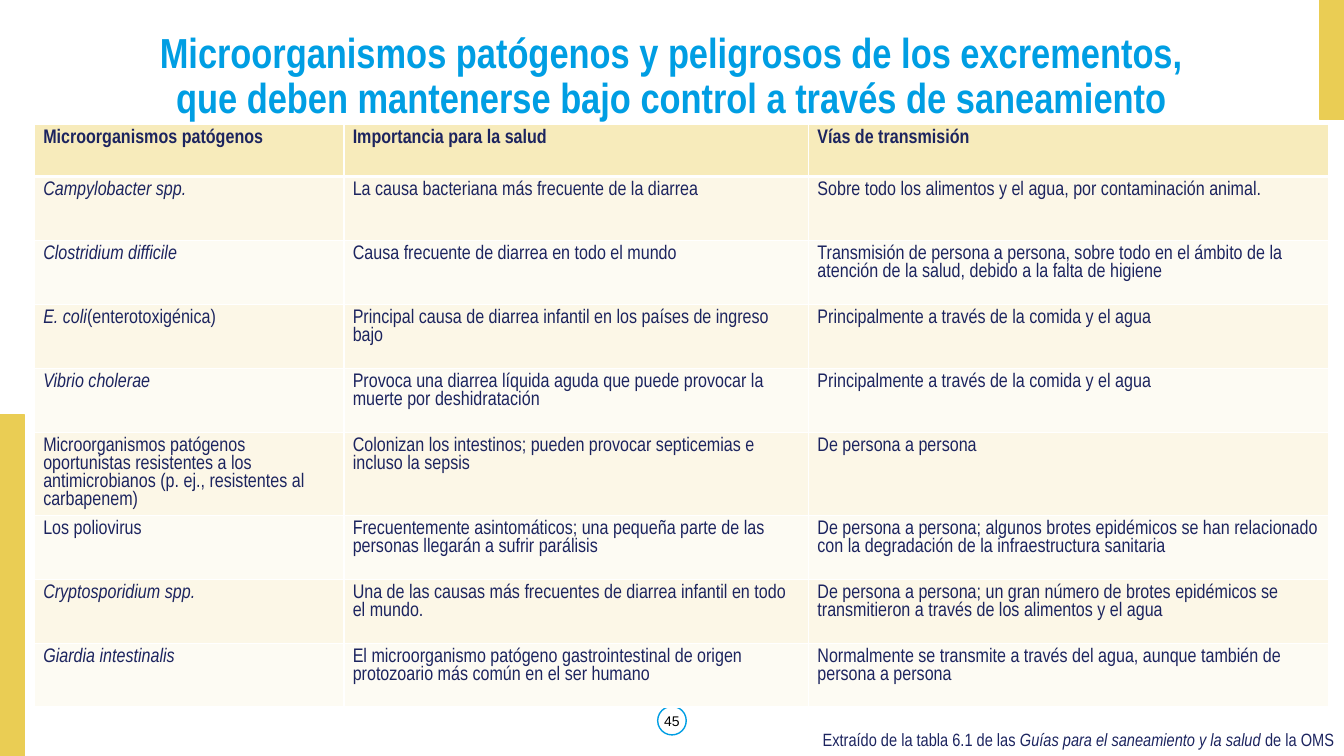
import pptx
import pptx.dml.color
import pptx.enum.shapes
import pptx.enum.text
import pptx.oxml
import pptx.oxml.ns
import pptx.util

Cm = pptx.util.Cm
Pt = pptx.util.Pt
ALIGN = pptx.enum.text.PP_ALIGN
ANCHOR = pptx.enum.text.MSO_ANCHOR
SHAPE = pptx.enum.shapes.MSO_SHAPE

NAVY, BLUE, GOLD, WHITE = "1C245F", "009EE3", "EACD54", "FFFFFF"
HEADER_FILL, BAND_FILLS = "F7EBBB", ("FCF7E7", "FDFBF3")

TITLE = ("Microorganismos patógenos y peligrosos de los excrementos,\v"
         "que deben mantenerse bajo control a través de saneamiento")
PAGE_NUMBER = "45"
SOURCE = "Extraído de la tabla 6.1 de las *Guías para el saneamiento y la salud* de la OMS"
ROWS = [
    ("Microorganismos patógenos", "Importancia para la salud", "Vías de transmisión"),
    ("*Campylobacter spp.*",
     "La causa bacteriana más frecuente de la diarrea",
     "Sobre todo los alimentos y el agua, por contaminación animal."),
    ("*Clostridium difficile*",
     "Causa frecuente de diarrea en todo el mundo",
     "Transmisión de persona a persona, sobre todo en el ámbito de la atención de la salud, "
     "debido a la falta de higiene"),
    ("*E. coli*(enterotoxigénica)",
     "Principal causa de diarrea infantil en los países de ingreso bajo",
     "Principalmente a través de la comida y el agua"),
    ("*Vibrio cholerae*",
     "Provoca una diarrea líquida aguda que puede provocar la muerte por deshidratación",
     "Principalmente a través de la comida y el agua"),
    ("Microorganismos patógenos oportunistas resistentes a los antimicrobianos "
     "(p. ej., resistentes al carbapenem)",
     "Colonizan los intestinos; pueden provocar septicemias e incluso la sepsis",
     "De persona a persona"),
    ("Los poliovirus",
     "Frecuentemente asintomáticos; una pequeña parte de las personas llegarán a sufrir parálisis",
     "De persona a persona; algunos brotes epidémicos se han relacionado con la degradación "
     "de la infraestructura sanitaria"),
    ("*Cryptosporidium spp.*",
     "Una de las causas más frecuentes de diarrea infantil en todo el mundo.",
     "De persona a persona; un gran número de brotes epidémicos se transmitieron a través "
     "de los alimentos y el agua"),
    ("*Giardia intestinalis*",
     "El microorganismo patógeno gastrointestinal de origen protozoario más común en el ser humano",
     "Normalmente se transmite a través del agua, aunque también de persona a persona"),
]

PAGE_WIDTH, PAGE_HEIGHT = 33.87, 19.05
BAR_WIDTH, LEFT_BAR_HEIGHT, RIGHT_BAR_HEIGHT = 0.61, 8.61, 3
RING_SIZE, RING_TOP = 0.72, 17.8
TABLE_LEFT, TABLE_TOP = 0.87, 3.13
COLUMN_WIDTHS = (7.8, 11.71, 13.11)
HEADER_HEIGHT, ROW_HEIGHT = 1.32, 1.61
CELL_MARGINS = {"margin_left": Cm(0.22), "margin_right": Cm(0.22),
                "margin_top": Cm(0.13), "margin_bottom": Cm(0.13)}

TITLE_FORMAT = {"size": Pt(30), "name": "Arial Narrow", "bold": True}
HEADER_FORMAT = {"size": Pt(14), "name": "Arial Narrow", "bold": True}
BODY_FORMAT = {"size": Pt(14), "name": "Arial Narrow", "bold": False}
SOURCE_FORMAT = {"size": Pt(12.7), "name": "Arial Narrow"}
NUMBER_FORMAT = {"size": Pt(10), "name": "Arial"}


def paint(color_format, value):
    color_format.rgb = pptx.dml.color.RGBColor.from_string(value)


def fill_with(target, value):
    target.fill.solid()
    paint(target.fill.fore_color, value)


def write(frame, text, font_format, color, align=ALIGN.LEFT, spacing=None):
    para = frame.paragraphs[0]
    para.alignment = align
    para.line_spacing = spacing
    for index, part in enumerate(text.split("*")):
        for position, line in enumerate(part.split("\v")):
            if position:
                para.add_line_break()
            if not line:
                continue
            span = para.add_run()
            span.text = line
            span.font.italic = index % 2 == 1
            for name, value in font_format.items():
                setattr(span.font, name, value)
            paint(span.font.color, color)


def add_figure(page, kind, bounds, line_color, fill_color=None):
    figure = page.shapes.add_shape(kind, *map(Cm, bounds))
    figure.shadow.inherit = False
    if fill_color:
        fill_with(figure, fill_color)
    else:
        figure.fill.background()
    paint(figure.line.color, line_color)
    figure.line.width = Pt(1)


def add_label(page, bounds, anchor, *text_arguments):
    box = page.shapes.add_textbox(*map(Cm, bounds))
    box.text_frame.word_wrap = True
    box.text_frame.vertical_anchor = anchor
    write(box.text_frame, *text_arguments)


def border_cell(cell, widths):
    properties = cell._tc.get_or_add_tcPr()
    for position, (side, width) in enumerate(widths.items()):
        properties.insert(position, pptx.oxml.parse_xml(
            f'<a:ln{side} {pptx.oxml.ns.nsdecls("a")} w="{Pt(width)}"><a:solidFill>'
            f'<a:srgbClr val="{WHITE}"/></a:solidFill></a:ln{side}>'))


def add_pathogen_table(page):
    height = HEADER_HEIGHT + ROW_HEIGHT * (len(ROWS) - 1)
    bounds = map(Cm, (TABLE_LEFT, TABLE_TOP, sum(COLUMN_WIDTHS), height))
    table = page.shapes.add_table(len(ROWS), len(COLUMN_WIDTHS), *bounds).table
    for column, width in zip(table.columns, COLUMN_WIDTHS):
        column.width = Cm(width)
    for row_index, texts in enumerate(ROWS):
        header = row_index == 0
        table.rows[row_index].height = Cm(HEADER_HEIGHT if header else ROW_HEIGHT)
        fill = HEADER_FILL if header else BAND_FILLS[(row_index - 1) % 2]
        widths = {"L": 1, "R": 1, "T": 3 if row_index == 1 else 1, "B": 3 if header else 1}
        for column_index, text in enumerate(texts):
            cell = table.cell(row_index, column_index)
            for name, value in CELL_MARGINS.items():
                setattr(cell, name, value)
            fill_with(cell, fill)
            border_cell(cell, widths)
            write(cell.text_frame, text, HEADER_FORMAT if header else BODY_FORMAT,
                  NAVY, ALIGN.LEFT, Pt(13))


def main():
    deck = pptx.Presentation()
    deck.slide_width, deck.slide_height = Cm(PAGE_WIDTH), Cm(PAGE_HEIGHT)
    page = deck.slides.add_slide(deck.slide_layouts[6])
    bars = ((0, PAGE_HEIGHT - LEFT_BAR_HEIGHT, BAR_WIDTH, LEFT_BAR_HEIGHT),
            (PAGE_WIDTH - BAR_WIDTH, 0, BAR_WIDTH, RIGHT_BAR_HEIGHT))
    for bounds in bars:
        add_figure(page, SHAPE.RECTANGLE, bounds, GOLD, GOLD)
    ring_left = (PAGE_WIDTH - RING_SIZE) / 2
    add_figure(page, SHAPE.OVAL, (ring_left, RING_TOP, RING_SIZE, RING_SIZE), BLUE)
    add_label(page, (2.33, 0.69, 29.2, 1.98), ANCHOR.TOP,
              TITLE, TITLE_FORMAT, BLUE, ALIGN.CENTER, 0.9)
    add_label(page, (0, 17.65, PAGE_WIDTH, 1.02), ANCHOR.MIDDLE,
              PAGE_NUMBER, NUMBER_FORMAT, "000000", ALIGN.CENTER)
    add_pathogen_table(page)
    add_label(page, (19.08, 18.24, 14.79, 0.81), ANCHOR.TOP,
              SOURCE, SOURCE_FORMAT, NAVY, ALIGN.RIGHT)
    deck.save("out.pptx")


if __name__ == "__main__":
    main()
